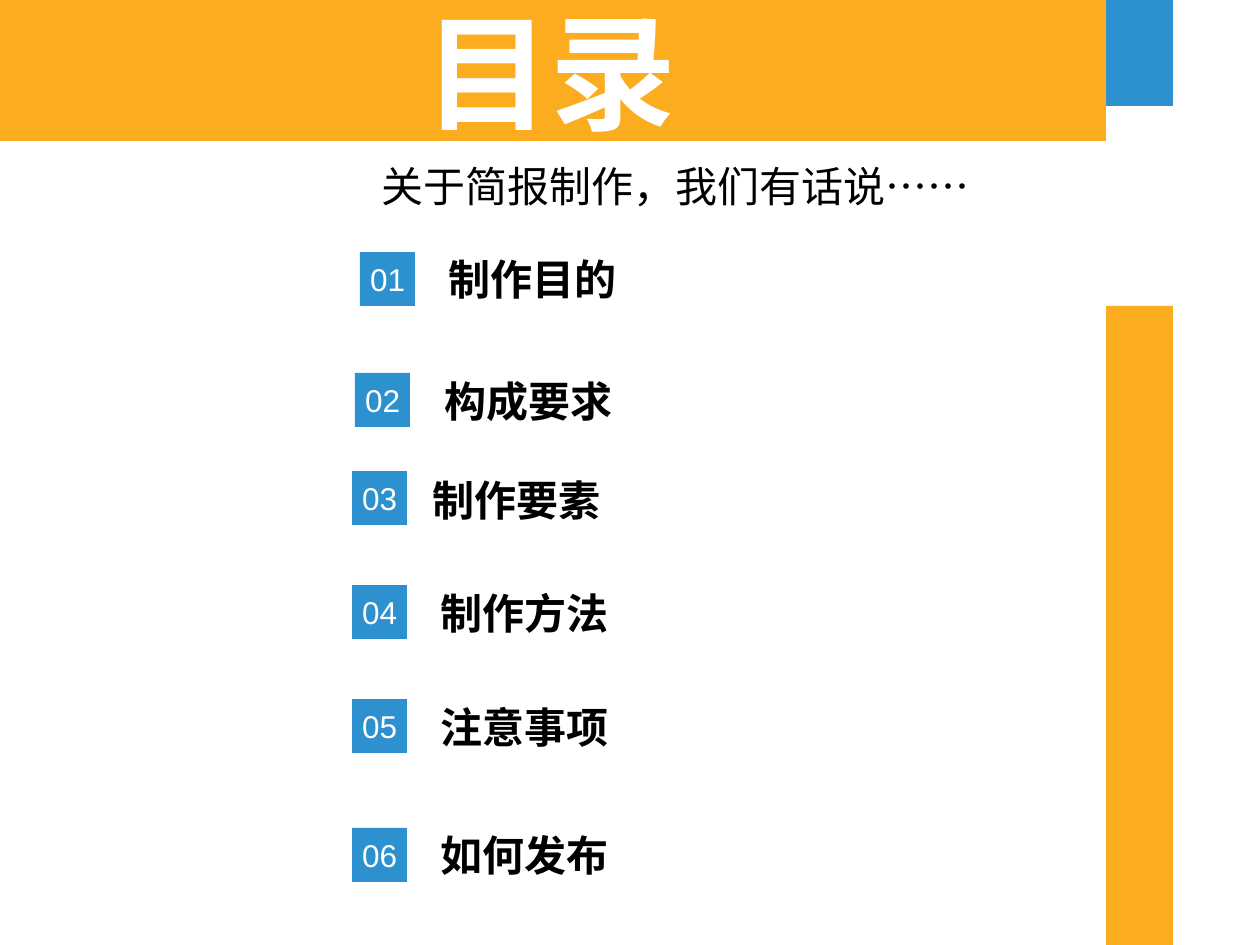
from lxml import etree
from pptx import Presentation
from pptx.dml.color import RGBColor
from pptx.enum.shapes import MSO_SHAPE
from pptx.enum.text import MSO_ANCHOR, PP_ALIGN
from pptx.oxml.ns import qn
from pptx.util import Pt

RECT = MSO_SHAPE.RECTANGLE
TOP, MIDDLE = MSO_ANCHOR.TOP, MSO_ANCHOR.MIDDLE
LEFT, CENTER = PP_ALIGN.LEFT, PP_ALIGN.CENTER
EMU_PER_PX = 914400 / 126
ORANGE, BLUE, WHITE, BLACK = "FCAC1F", "2C91CE", "FFFFFF", "000000"
CHINESE, LATIN = "Noto Sans CJK SC", "Arial"


def px(length):
    return round(length * EMU_PER_PX)


def color(value):
    return RGBColor.from_string(value)


class Deck:
    title = dict(name=CHINESE, size=Pt(72), bold=True)
    heading = dict(name=CHINESE, size=Pt(24), bold=True)
    body = dict(name=CHINESE, size=Pt(24), bold=False)
    number = dict(name=LATIN, size=Pt(18), bold=False)

    def __init__(self, width, height):
        self.presentation = Presentation()
        self.presentation.slide_width = px(width)
        self.presentation.slide_height = px(height)
        self.slide = self.presentation.slides.add_slide(self.presentation.slide_layouts[6])

    def set_text(self, holder, text, style, ink, align, anchor, insets):
        frame = holder.text_frame
        left, top, right, bottom = map(px, insets)
        layout = dict(word_wrap=True, vertical_anchor=anchor, margin_left=left,
                      margin_top=top, margin_right=right, margin_bottom=bottom)
        for key, value in layout.items():
            setattr(frame, key, value)
        paragraph = frame.paragraphs[0]
        paragraph.alignment = align
        run = paragraph.add_run()
        run.text = text
        for key, value in style.items():
            setattr(run.font, key, value)
        run.font.color.rgb = color(ink)
        east_asian = etree.SubElement(run.font._element, qn("a:ea"))
        east_asian.set("typeface", style["name"])

    def block(self, box, fill, shapes=None):
        shapes = shapes or self.slide.shapes
        block = shapes.add_shape(RECT, *map(px, box))
        block.shadow.inherit = False
        block.fill.solid()
        block.fill.fore_color.rgb = color(fill)
        block.line.fill.background()
        return block

    def banner(self, box, text):
        self.set_text(self.block(box, ORANGE), text, self.title, WHITE,
                      CENTER, MIDDLE, (13, 6, 13, 6))

    def text(self, box, text, style, anchor=MIDDLE, insets=(13, 6, 13, 6), shapes=None):
        shapes = self.slide.shapes if shapes is None else shapes
        self.set_text(shapes.add_textbox(*map(px, box)), text, style, BLACK,
                      LEFT, anchor, insets)

    def entry(self, number, topic, badge_at, topic_at):
        shapes = self.slide.shapes.add_group_shape().shapes
        self.text((*topic_at, 616, 64), topic, self.heading, shapes=shapes)
        badge = self.block((*badge_at, 55, 54), BLUE, shapes)
        self.set_text(badge, f"{number:02d}", self.number, WHITE, CENTER, MIDDLE, (0, 0, 0, 0))


def main():
    deck = Deck(1260, 945)
    deck.block((1106, 306, 67, 641), ORANGE)
    deck.block((1106, 0, 67, 106), BLUE)
    deck.banner((-5, 0, 1111, 141), "目录")
    deck.text((355, 147, 795, 140), "关于简报制作，我们有话说……", deck.body,
              TOP, (27, 14, 13, 6))
    entries = [
        ("制作目的", (360, 252), (436, 247)),
        ("构成要求", (355, 373), (432, 369)),
        ("制作要素", (352, 471), (420, 468)),
        ("制作方法", (352, 585), (428, 581)),
        ("注意事项", (352, 699), (428, 695)),
        ("如何发布", (352, 828), (428, 823)),
    ]
    for number, (topic, badge_at, topic_at) in enumerate(entries, 1):
        deck.entry(number, topic, badge_at, topic_at)
    deck.presentation.save("out.pptx")


if __name__ == "__main__":
    main()
